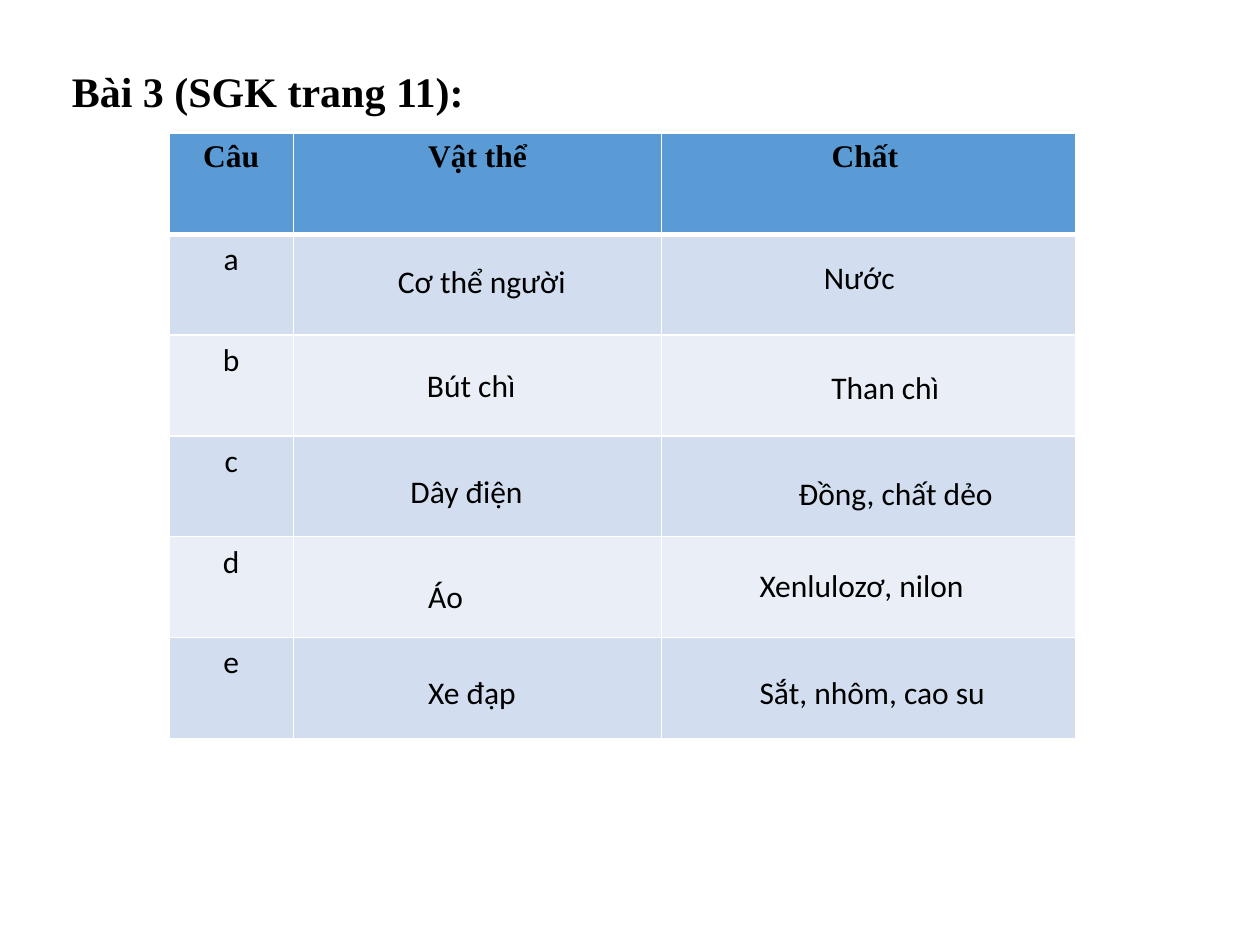
from lxml.etree import SubElement
from pptx import Presentation
from pptx.dml.color import RGBColor
from pptx.enum.text import MSO_ANCHOR, MSO_AUTO_SIZE, PP_ALIGN
from pptx.oxml.ns import qn
from pptx.util import Inches, Pt

BLACK = RGBColor(0x00, 0x00, 0x00)
WHITE = RGBColor(0xFF, 0xFF, 0xFF)
HEADER_BLUE = RGBColor(0x5B, 0x9B, 0xD5)
BANDS = [RGBColor(0xD2, 0xDE, 0xEF), RGBColor(0xEA, 0xEF, 0xF7)]
SERIF = "Times New Roman"
SANS = "Calibri"

# Content
TITLE = "Bài 3 (SGK trang 11):"
HEADERS = ["Câu", "Vật thể", "Chất "]
QUESTIONS = ["a", "b", "c", "d", "e"]
COLUMN_WIDTHS = [0.99, 2.92, 3.29]
ROW_HEIGHT = 0.8
# Answers lying over the table: text, left, top, width
ANSWERS = [
    ("Cơ thể người", 3.06, 2.03, 1.55),
    ("Nước", 6.44, 2.00, 0.77),
    ("Bút chì", 3.29, 2.86, 0.91),
    ("Than chì", 6.50, 2.87, 1.07),
    ("Dây điện", 3.16, 3.70, 1.10),
    ("Đồng, chất dẻo", 6.24, 3.71, 1.76),
    ("Áo", 3.30, 4.53, 0.54),
    ("Xenlulozơ, nilon", 5.93, 4.44, 1.84),
    ("Xe đạp", 3.30, 5.29, 0.91),
    ("Sắt, nhôm, cao su", 5.93, 5.29, 2.01),
]


def style(paragraph, name, size, bold=False, align=PP_ALIGN.LEFT):
    paragraph.alignment = align
    font = paragraph.font
    font.name, font.size, font.bold = name, Pt(size), bold
    font.color.rgb = BLACK


def add_borders(cell, top, bottom):
    properties = cell._tc.get_or_add_tcPr()
    for side, width in (("L", 1), ("R", 1), ("T", top), ("B", bottom)):
        line = SubElement(properties, qn(f"a:ln{side}"), w=str(Pt(width)))
        fill = SubElement(line, qn("a:solidFill"))
        SubElement(fill, qn("a:srgbClr"), val=str(WHITE))


deck = Presentation()
deck.slide_width, deck.slide_height = Inches(10), Inches(7.5)
page = deck.slides.add_slide(deck.slide_layouts[5])
page.background.fill.solid()
page.background.fill.fore_color.rgb = WHITE

# Title
title = page.shapes.title
title.left, title.top = Inches(0.47), Inches(0.41)
title.width, title.height = Inches(3.67), Inches(0.81)
title.text_frame.text = TITLE
title.text_frame.vertical_anchor = MSO_ANCHOR.TOP
title.text_frame.auto_size = MSO_AUTO_SIZE.NONE
heading = title.text_frame.paragraphs[0]
heading.line_spacing = 1.15
style(heading, SERIF, 24, bold=True)

# Table
rows = [HEADERS] + [[question, "", ""] for question in QUESTIONS]
table = page.shapes.add_table(
    len(rows), len(HEADERS), Inches(1.34), Inches(1.06),
    Inches(sum(COLUMN_WIDTHS)), Inches(ROW_HEIGHT * len(rows))).table
for column, width in zip(table.columns, COLUMN_WIDTHS):
    column.width = Inches(width)
for row_index, texts in enumerate(rows):
    table.rows[row_index].height = Inches(ROW_HEIGHT)
    is_header = row_index == 0
    for column_index, text in enumerate(texts):
        cell = table.cell(row_index, column_index)
        add_borders(cell, top=3 if row_index == 1 else 1, bottom=3 if is_header else 1)
        cell.fill.solid()
        cell.fill.fore_color.rgb = HEADER_BLUE if is_header else BANDS[(row_index - 1) % 2]
        if text:
            cell.text = text
            style(cell.text_frame.paragraphs[0], SERIF if is_header else SANS, 18,
                  bold=is_header, align=PP_ALIGN.CENTER)

# Answers
for text, left, top, width in ANSWERS:
    box = page.shapes.add_textbox(Inches(left), Inches(top), Inches(width), Inches(0.4))
    box.text_frame.word_wrap = False
    box.text_frame.auto_size = MSO_AUTO_SIZE.SHAPE_TO_FIT_TEXT
    box.text_frame.text = text
    style(box.text_frame.paragraphs[0], SANS, 18)

deck.save("out.pptx")
